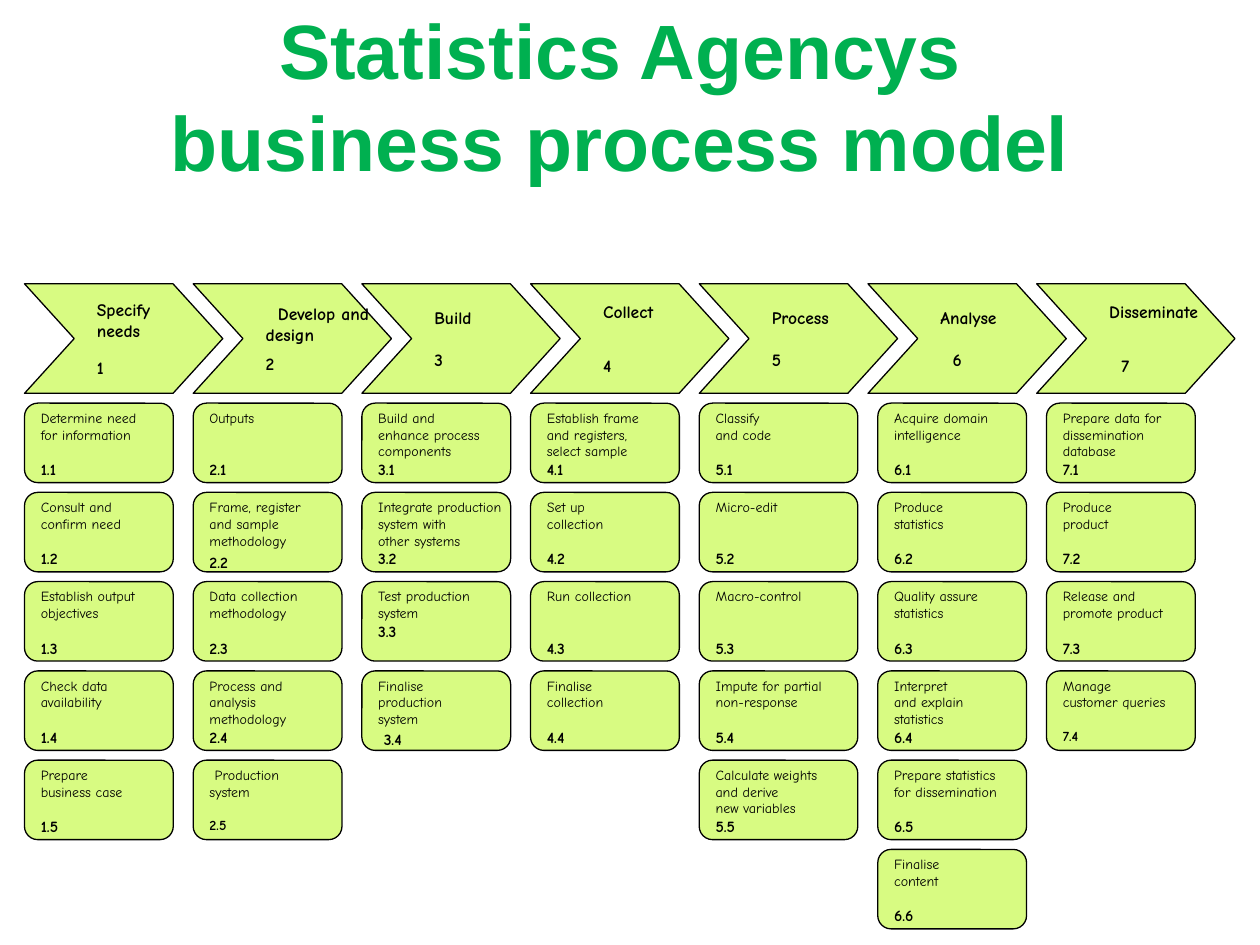
from pptx import Presentation
from pptx.dml.color import RGBColor
from pptx.enum.shapes import MSO_SHAPE as SHAPE
from pptx.enum.text import MSO_ANCHOR as ANCHOR, PP_ALIGN as ALIGN
from pptx.util import Pt

LIME = RGBColor(0xD8, 0xFB, 0x82)
GREEN = RGBColor(0x00, 0xB0, 0x50)
BLACK = RGBColor(0, 0, 0)
FONT = "Comic Neue"

LEFT, COL_STEP = 14, 96.4
CHEVRON_TOP, CHEVRON_W, CHEVRON_H = 162.2, 113.3, 62.6
CARD_TOP, CARD_STEP, CARD_W, CARD_H = 230.4, 51, 85, 45.4
CARD_LINE, CARD_LINES = 9.6, 3
WIDE_STAGE, WIDE_EXTRA = 5, 5.6

STAGES = [
    ("Specify\nneeds", 9, 0, 0, [
        "Determine need\nfor information", "Consult and\nconfirm need",
        "Establish output\nobjectives", "Check data\navailability",
        "Prepare\nbusiness case"]),
    ("Develop and\ndesign", 5, 7, 0, [
        "Outputs", "Frame, register\nand sample\nmethodology",
        "Data collection\nmethodology", "Process and\nanalysis\nmethodology",
        "Production\nsystem"]),
    ("Build", 12, 0, 0, [
        "Build and\nenhance process\ncomponents",
        "Integrate production\nsystem with\nother systems",
        "Test production\nsystem", "Finalise\nproduction\nsystem"]),
    ("Collect", 19, 0, 0, [
        "Establish frame\nand registers,\nselect sample", "Set up\ncollection",
        "Run collection", "Finalise\ncollection"]),
    ("Process", 12, 0, 0, [
        "Classify\nand code", "Micro-edit", "Macro-control",
        "Impute for partial\nnon-response",
        "Calculate weights\nand derive\nnew variables"]),
    ("Analyse", 12, 0, 7, [
        "Acquire domain\nintelligence", "Produce\nstatistics",
        "Quality assure\nstatistics", "Interpret\nand explain\nstatistics",
        "Prepare statistics\nfor dissemination", "Finalise\ncontent"]),
    ("Disseminate", 19, 0, 7, [
        "Prepare data for\ndissemination\ndatabase", "Produce\nproduct",
        "Release and\npromote product", "Manage\ncustomer queries"]),
]
CARD_GAPS = {"2.2": 2.4, "3.3": 0, "3.4": 1.5}
LABEL_INDENTS = {"2.5": 3}
NUMBER_INDENTS = {"3.4": 3.2}
SMALL_NUMBERS = {"2.5", "7.4"}


def write(p, text, size, bold, indent=0, gap=0):
    """Fill a left-aligned paragraph and format its runs."""
    p.text = text
    p.alignment = ALIGN.LEFT
    p.space_before = Pt(gap)
    if indent:
        p._p.get_or_add_pPr().set("indent", str(Pt(indent)))
    for r in p.runs:
        r.font.name, r.font.size, r.font.bold = FONT, Pt(size), bold
        r.font.color.rgb = BLACK


def add_box(slide, kind, box, adjustment, inset_left, inset_top, anchor):
    """Add an outlined lime shape and return its text frame."""
    s = slide.shapes.add_shape(kind, *map(Pt, box))
    s.adjustments[0] = adjustment
    s.shadow.inherit = False
    s.fill.solid()
    s.fill.fore_color.rgb = LIME
    s.line.color.rgb = BLACK
    s.line.width = Pt(0.75)
    tf = s.text_frame
    tf.word_wrap = False
    tf.vertical_anchor = anchor
    tf.margin_left, tf.margin_top = Pt(inset_left), Pt(inset_top)
    return tf


def add_title(slide, box):
    """Place the slide title in the box."""
    tf = slide.shapes.add_textbox(*map(Pt, box)).text_frame
    tf.word_wrap = True
    p = tf.paragraphs[0]
    p.text = "Statistics Agencys\nbusiness process model"
    p.alignment = ALIGN.CENTER
    for r in p.runs:
        r.font.name, r.font.size, r.font.bold = "Arial", Pt(44), True
        r.font.color.rgb = GREEN


def add_chevron(slide, box, number, label, gap, label_indent, number_indent):
    """Place a stage arrow with its label and number in the box."""
    tf = add_box(slide, SHAPE.CHEVRON, box, 0.454, 13, 3.6, ANCHOR.MIDDLE)
    write(tf.paragraphs[0], label, 10, True, label_indent)
    write(tf.add_paragraph(), number, 10, True, number_indent, gap)


def add_card(slide, box, number, label):
    """Place an activity card with its label and number in the box."""
    tf = add_box(slide, SHAPE.ROUNDED_RECTANGLE, box, 0.167, 7.2, 1.4, ANCHOR.TOP)
    blank_lines = CARD_LINES - len(label.split("\n"))
    gap = CARD_GAPS.get(number, CARD_LINE * blank_lines)
    size = 8 if number in SMALL_NUMBERS else 9
    write(tf.paragraphs[0], label, 8, False, LABEL_INDENTS.get(number, 0))
    write(tf.add_paragraph(), number, size, True, NUMBER_INDENTS.get(number, 0), gap)


def add_stage(slide, left, stage, label, gap, label_indent, number_indent, cards):
    """Place a stage arrow and the column of its cards."""
    add_chevron(slide, (left, CHEVRON_TOP, CHEVRON_W, CHEVRON_H), str(stage),
                label, gap, label_indent, number_indent)
    card_left = left + (WIDE_EXTRA if stage > WIDE_STAGE else 0)
    width = CARD_W + (WIDE_EXTRA if stage == WIDE_STAGE else 0)
    for row, text in enumerate(cards):
        box = (card_left, CARD_TOP + row * CARD_STEP, width, CARD_H)
        add_card(slide, box, f"{stage}.{row + 1}", text)


def main():
    """Build the slide and save it."""
    prs = Presentation()
    prs.slide_width, prs.slide_height = Pt(720), Pt(540)
    slide = prs.slides.add_slide(prs.slide_layouts[6])
    for i, stage in enumerate(STAGES):
        add_stage(slide, LEFT + i * COL_STEP, i + 1, *stage)
    add_title(slide, (54, -2, 601, 114))
    prs.save("out.pptx")


if __name__ == "__main__":
    main()
